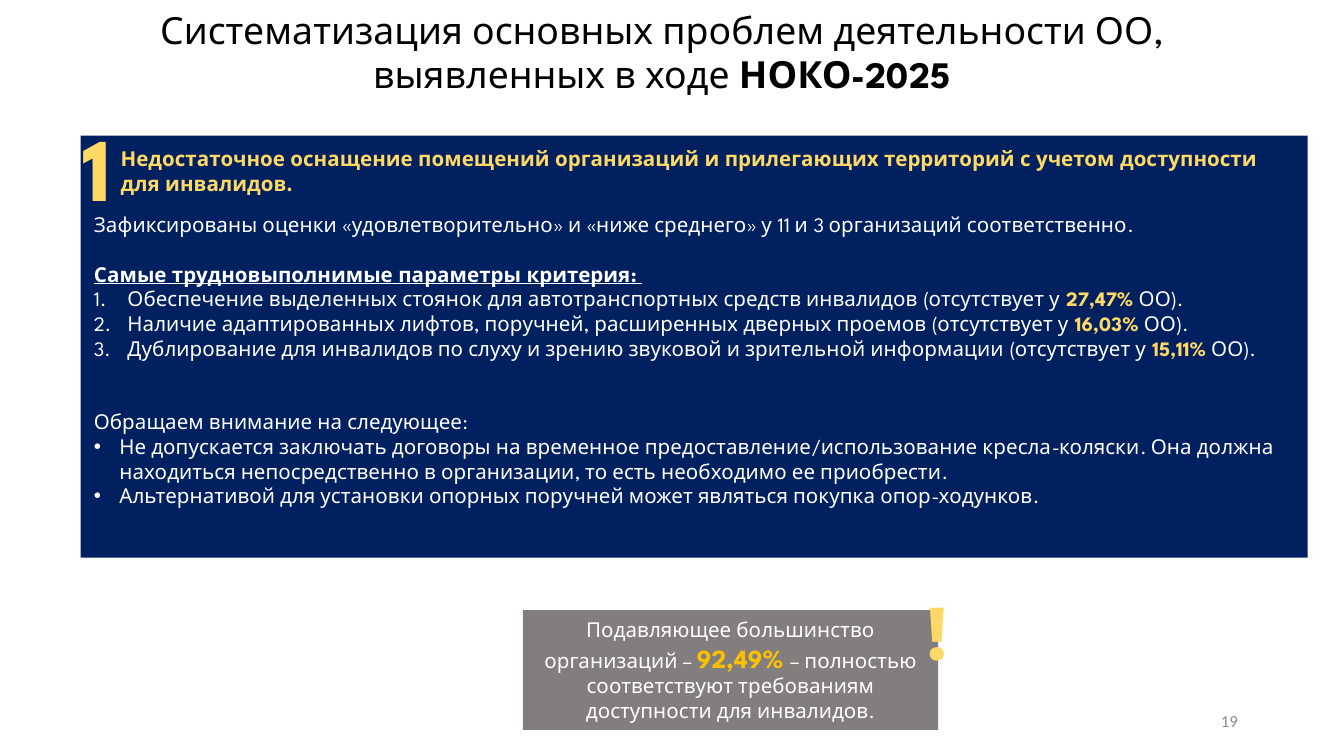
from lxml.etree import SubElement
from pptx import Presentation
from pptx.dml.color import RGBColor
from pptx.enum.shapes import MSO_SHAPE as Shape
from pptx.enum.text import MSO_ANCHOR as Anchor, MSO_AUTO_SIZE as Fit, PP_ALIGN as Align
from pptx.oxml.ns import qn
from pptx.util import Inches, Pt

WIDE = 10
HIGH = WIDE * 9 / 16
FONT = "League Spartan"
NAVY, GRAY, WHITE, GOLD, AMBER = "002060", "767171", "FFFFFF", "FFD966", "FFC000"
BODY = {"size": 11, "color": WHITE}
MARK = {"color": GOLD, "bold": True}
LINE = 13.2  # height of one body line, points

INTRO = ("Зафиксированы оценки «удовлетворительно» и «ниже среднего» "
         "у 11 и 3 организаций соответственно.")
HARD = [
    ("Обеспечение выделенных стоянок для автотранспортных средств инвалидов", "27,47%"),
    ("Наличие адаптированных лифтов, поручней, расширенных дверных проемов", "16,03%"),
    ("Дублирование для инвалидов по слуху и зрению звуковой и зрительной информации", "15,11%"),
]
NOTES = [
    "Не допускается заключать договоры на временное предоставление/использование "
    "кресла-коляски. Она должна находиться непосредственно в организации, "
    "то есть необходимо ее приобрести.",
    "Альтернативой для установки опорных поручней может являться покупка опор-ходунков.",
]


def rgb(code):
    return RGBColor.from_string(code)


def add_run(para, text, **form):
    run = para.add_run()
    run.text = text
    form = {"name": FONT, "bold": False, **form}
    run.font.color.rgb = rgb(form.pop("color"))
    run.font.size = Pt(form.pop("size"))
    for key, value in form.items():
        setattr(run.font, key, value)


def set_frame(shape, align=Align.LEFT, anchor=Anchor.TOP):
    """Prepare the text frame and return its first paragraph."""
    frame = shape.text_frame
    form = {"word_wrap": True, "auto_size": Fit.NONE, "vertical_anchor": anchor}
    for key, value in form.items():
        setattr(frame, key, value)
    para = frame.paragraphs[0]
    para.alignment = align
    return para


def add_label(slide, box, text, align=Align.LEFT, anchor=Anchor.TOP, **form):
    shape = slide.shapes.add_textbox(*map(Inches, box))
    add_run(set_frame(shape, align, anchor), text, **form)


def add_rect(slide, box, color):
    shape = slide.shapes.add_shape(Shape.RECTANGLE, *map(Inches, box))
    shape.shadow.inherit = False
    shape.fill.solid()
    shape.fill.fore_color.rgb = rgb(color)
    shape.line.fill.background()
    return shape


def set_bullet(para, indent, tag, **attrs):
    props = para._p.get_or_add_pPr()
    props.set("marL", str(Inches(indent)))
    props.set("indent", str(-Inches(indent)))
    if tag == "a:buChar":
        SubElement(props, qn("a:buFont"), typeface="Arial")
    SubElement(props, qn(tag), **attrs)


def add_title(slide, box):
    title = slide.shapes.title
    title.left, title.top, title.width, title.height = map(Inches, box)
    para = set_frame(title, Align.CENTER)
    form = {"size": 20, "color": "000000"}
    add_run(para, "Систематизация основных проблем деятельности ОО, выявленных в ходе ", **form)
    add_run(para, "НОКО-2025", bold=True, **form)


def add_details(slide, box):
    shape = slide.shapes.add_textbox(*map(Inches, box))
    add_run(set_frame(shape), INTRO, **BODY)
    frame = shape.text_frame

    para = frame.add_paragraph()
    para.space_before = Pt(LINE)
    add_run(para, "Самые трудновыполнимые параметры критерия: ", bold=True, underline=True, **BODY)
    for text, share in HARD:
        para = frame.add_paragraph()
        set_bullet(para, 0.25, "a:buAutoNum", type="arabicPeriod")
        add_run(para, f"{text} (отсутствует у ", **BODY)
        add_run(para, share, **{**BODY, **MARK})
        add_run(para, " ОО).", **BODY)

    para = frame.add_paragraph()
    para.space_before = Pt(2 * LINE)
    add_run(para, "Обращаем внимание на следующее:", **BODY)
    for text in NOTES:
        para = frame.add_paragraph()
        set_bullet(para, 0.19, "a:buChar", char="•")
        add_run(para, text, **BODY)


def add_panel(slide, box):
    x, y, w, h = box
    add_rect(slide, box, NAVY)
    add_label(slide, (x + 0.2, y + 0.03, w - 0.29, 0.47),
              "Недостаточное оснащение помещений организаций и прилегающих территорий "
              "с учетом доступности для инвалидов.", size=11, **MARK)
    add_label(slide, (x - 0.33, y - 0.23, 0.91, 0.98), "1", Align.CENTER, size=48, **MARK)
    add_details(slide, (x, y + 0.52, w + 0.02, h - 0.63))


def add_callout(slide, box):
    x, y, w, h = box
    shape = add_rect(slide, box, GRAY)
    fill = shape.fill._xPr.find(qn("a:solidFill"))
    SubElement(fill[0], qn("a:alpha"), val="90000")
    para = set_frame(shape, Align.CENTER, Anchor.MIDDLE)
    add_run(para, "Подавляющее большинство организаций – ", **BODY)
    add_run(para, "92,49% ", size=14, color=AMBER, bold=True)
    add_run(para, "– полностью соответствуют требованиям доступности для инвалидов.", **BODY)
    add_label(slide, (x + w - 0.28, y - 0.23, 0.55, 0.77), "!", Align.CENTER,
              size=40, name="Montserrat", **MARK)


def main():
    deck = Presentation()
    deck.slide_width, deck.slide_height = Inches(WIDE), Inches(HIGH)
    slide = deck.slides.add_slide(deck.slide_layouts[5])
    add_title(slide, (0.3, 0, 9.25, 0.77))
    add_panel(slide, (0.6, 1.01, 9.13, 3.14))
    add_callout(slide, (3.89, 4.54, 3.09, 0.89))
    add_label(slide, (7.06, 5.21, 2.25, 0.3), "19", Align.RIGHT, Anchor.MIDDLE,
              size=9, name="Calibri", color="8C8C8C")
    deck.save("out.pptx")


if __name__ == "__main__":
    main()
